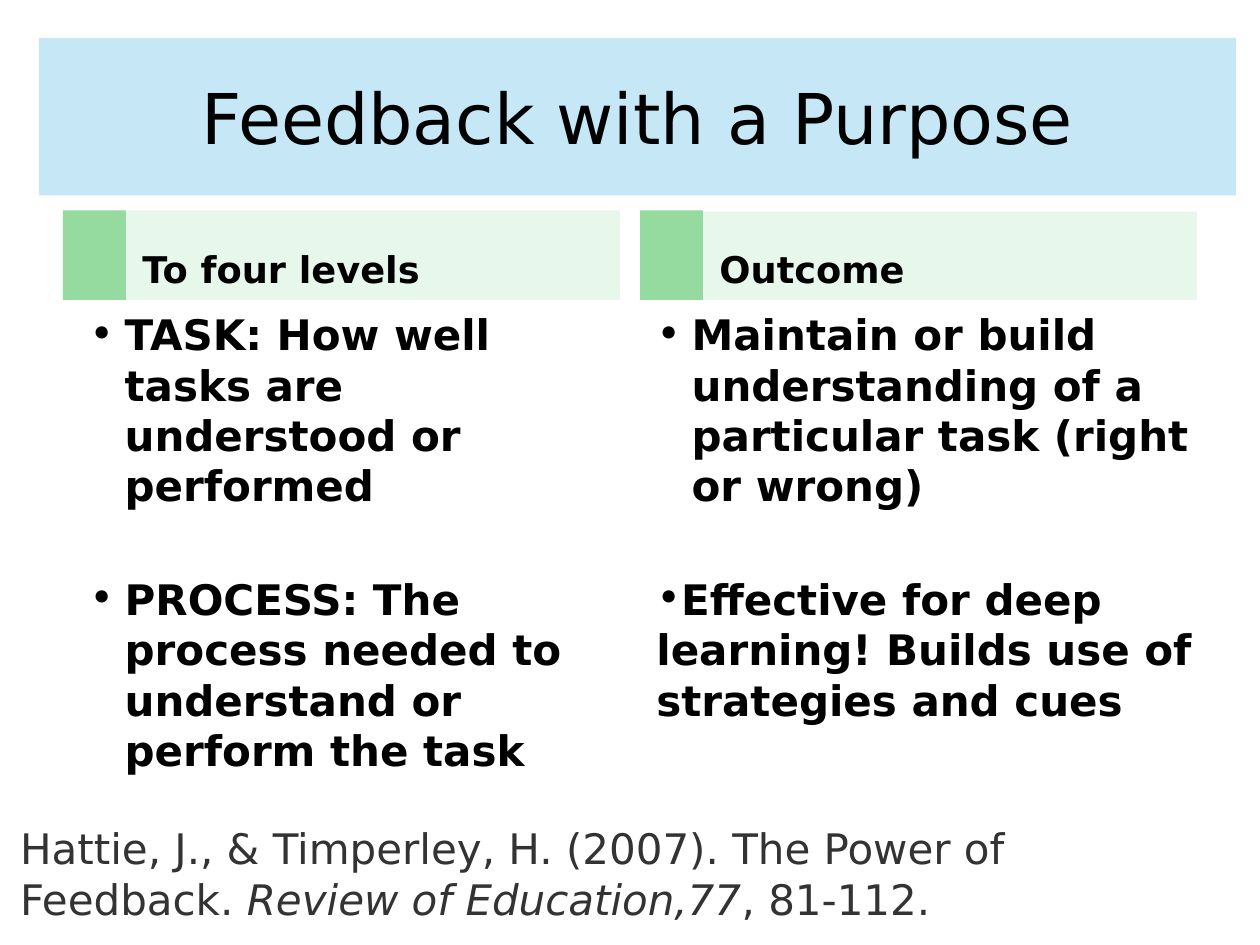
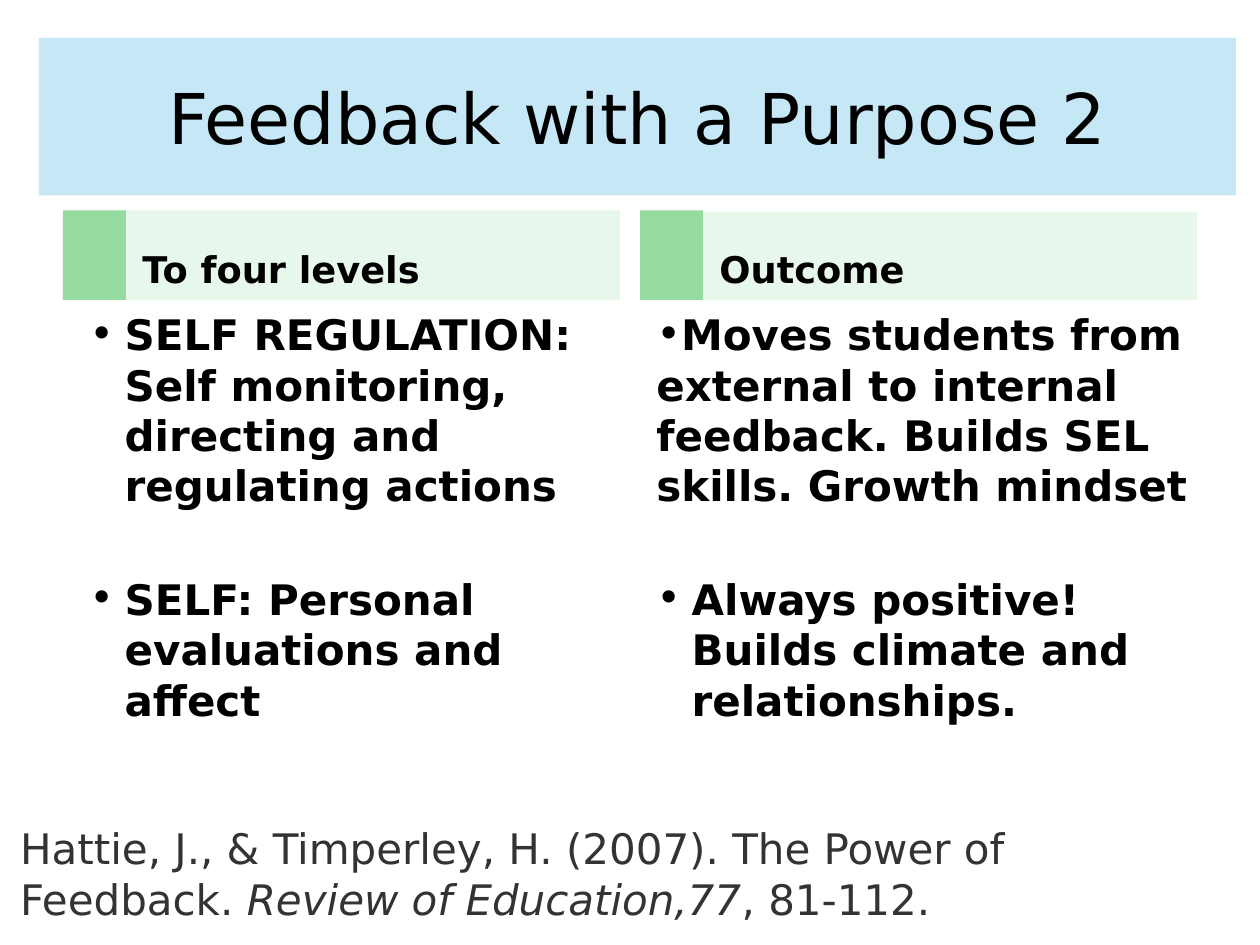
from dataclasses import dataclass

from lxml import etree
from pptx import Presentation
from pptx.dml.color import RGBColor
from pptx.enum import shapes, text
from pptx.oxml import ns
from pptx.util import Inches, Pt


@dataclass(frozen=True)
class Theme:
    font: str = "DejaVu Sans"
    ink: str = "000000"
    citation_ink: str = "333333"
    title_band: str = "A9DCF2"
    title_opacity: int = 67
    header_band: str = "E8F7EB"
    header_tab: str = "95DA9F"
    title_size: int = 40
    header_size: int = 21
    body_size: int = 24
    point_gap: int = 36
    hang: float = 0.28
    inset: float = 0.13


THEME = Theme()

CITATION = [
    ("Hattie, J., & Timperley, H. (2007). The Power of Feedback. ", False),
    ("Review of Education,77", True),
    (", 81-112.", False),
]

# Each point is its wording and whether its lines hang clear of the bullet.
SLIDES = [
    ("Feedback with a Purpose",
     [("TASK: How well tasks are understood or performed", True),
      ("PROCESS: The process needed to understand or perform the task", True)],
     [("Maintain or build understanding of a particular task (right or wrong)", True),
      ("Effective for deep learning! Builds use of strategies and cues", False)]),
    ("Feedback with a Purpose 2",
     [("SELF REGULATION: Self monitoring, directing and regulating actions", True),
      ("SELF: Personal evaluations and affect", True)],
     [("Moves students from external to internal feedback. "
       "Builds SEL skills. Growth mindset", False),
      ("Always positive! Builds climate and relationships.", True)]),
]


def add_band(slide, box, color, opacity=100):
    band = slide.shapes.add_shape(shapes.MSO_SHAPE.RECTANGLE, *map(Inches, box))
    band.shadow.inherit = False
    band.line.fill.background()
    band.fill.solid()
    band.fill.fore_color.rgb = RGBColor.from_string(color)
    if opacity < 100:
        fill_color = band.fill._xPr.find(".//" + ns.qn("a:srgbClr"))
        etree.SubElement(fill_color, ns.qn("a:alpha"), val=str(opacity * 1000))
    return band


def prepare_frame(shape, anchor, vertical_inset=0.07):
    frame = shape.text_frame
    frame.word_wrap = True
    frame.vertical_anchor = anchor
    frame.margin_left = frame.margin_right = Inches(THEME.inset)
    frame.margin_top = frame.margin_bottom = Inches(vertical_inset)
    return frame


def add_run(paragraph, wording, size, color=THEME.ink, bold=False, italic=False):
    run = paragraph.add_run()
    run.text = wording
    run.font.name = THEME.font
    run.font.size = Pt(size)
    run.font.bold = bold
    run.font.italic = italic
    run.font.color.rgb = RGBColor.from_string(color)


def add_bullet(paragraph, hang):
    properties = paragraph._p.get_or_add_pPr()
    properties.set("marL", str(Inches(hang)))
    properties.set("indent", str(-Inches(hang)))
    color = etree.SubElement(properties, ns.qn("a:buClr"))
    etree.SubElement(color, ns.qn("a:srgbClr"), val=THEME.ink)
    etree.SubElement(properties, ns.qn("a:buFont"), typeface=THEME.font)
    etree.SubElement(properties, ns.qn("a:buChar"), char="•")


def add_title(slide, wording):
    band = add_band(slide, (0.31, 0.3, 9.5, 1.25), THEME.title_band, THEME.title_opacity)
    heading = prepare_frame(band, text.MSO_ANCHOR.MIDDLE).paragraphs[0]
    heading.alignment = text.PP_ALIGN.CENTER
    add_run(heading, wording, THEME.title_size)


def add_column_header(slide, left, top, wording):
    """Draw a dark tab followed by a pale band; both end at the same height."""
    bottom, tab_top, tab_width = 2.38, 1.67, 0.5
    add_band(slide, (left, tab_top, tab_width, bottom - tab_top), THEME.header_tab)
    band = add_band(slide, (left + tab_width, top, 3.92, bottom - top), THEME.header_band)
    heading = prepare_frame(band, text.MSO_ANCHOR.BOTTOM).paragraphs[0]
    heading.alignment = text.PP_ALIGN.LEFT
    add_run(heading, wording, THEME.header_size, bold=True)


def add_points(slide, box, points):
    body = slide.shapes.add_textbox(*map(Inches, box))
    frame = prepare_frame(body, text.MSO_ANCHOR.TOP)
    for number, (wording, hangs) in enumerate(points):
        point = frame.add_paragraph() if number else frame.paragraphs[0]
        add_bullet(point, THEME.hang if hangs else 0)
        if number:
            point.space_before = Pt(THEME.point_gap)
        add_run(point, wording, THEME.body_size, bold=True)


def add_citation(slide):
    footer = slide.shapes.add_textbox(*map(Inches, (0.03, 6.4, 8.14, 0.3)))
    reference = prepare_frame(footer, text.MSO_ANCHOR.TOP, THEME.inset).paragraphs[0]
    for wording, italic in CITATION:
        add_run(reference, wording, THEME.body_size, THEME.citation_ink, italic=italic)


def main():
    deck = Presentation()
    deck.slide_width, deck.slide_height = Inches(10), Inches(7.5)
    for title, levels, outcomes in SLIDES:
        slide = deck.slides.add_slide(deck.slide_layouts[6])
        add_title(slide, title)
        add_column_header(slide, 0.5, 1.67, "To four levels")
        add_column_header(slide, 5.08, 1.68, "Outcome")
        add_points(slide, (0.58, 2.38, 4.34, 4.32), levels)
        add_points(slide, (5.08, 2.38, 4.73, 5.12), outcomes)
        add_citation(slide)
    deck.save("out.pptx")


if __name__ == "__main__":
    main()
